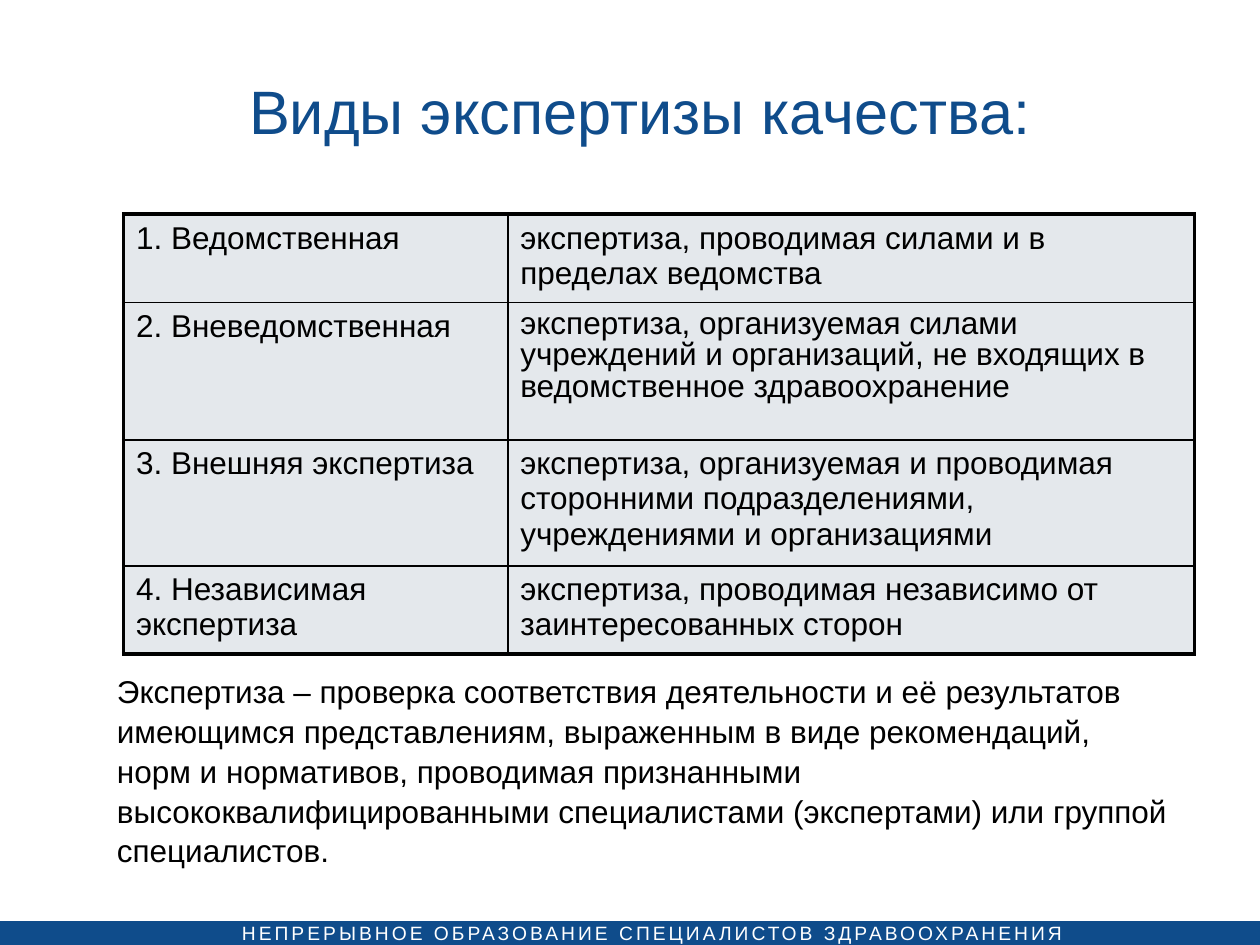
import pptx
import pptx.util
import pptx.dml.color
import pptx.enum.shapes
import pptx.enum.text
import pptx.oxml
import pptx.oxml.ns

Inches = pptx.util.Inches
Pt = pptx.util.Pt
RGBColor = pptx.dml.color.RGBColor
ALIGN = pptx.enum.text.PP_ALIGN
ANCHOR = pptx.enum.text.MSO_ANCHOR

BLUE = RGBColor(0x0F, 0x4C, 0x8B)
WHITE = RGBColor(0xFF, 0xFF, 0xFF)
BLACK = RGBColor(0, 0, 0)
GREY = RGBColor(0xE4, 0xE8, 0xEC)
THICK, THIN = 2.25, 1

KINDS = [
    ("1. Ведомственная",
     "экспертиза, проводимая силами и в пределах ведомства"),
    ("2. Вневедомственная",
     "экспертиза, организуемая силами учреждений и организаций, "
     "не входящих в ведомственное здравоохранение"),
    ("3. Внешняя экспертиза",
     "экспертиза, организуемая и проводимая сторонними подразделениями, "
     "учреждениями и организациями"),
    ("4. Независимая экспертиза",
     "экспертиза, проводимая независимо от заинтересованных сторон"),
]
WIDTHS = [3.05, 5.45]
HEIGHTS = [0.64, 1.09, 0.92, 0.64]
TIGHT = (1, 1)


def write(frame, text, size=18, color=BLACK, align=ALIGN.LEFT,
          line=None, track=None):
    frame.word_wrap = True
    para = frame.paragraphs[0]
    para.alignment = align
    para.line_spacing = line
    run = para.add_run()
    run.text = text
    run.font.name = "Arial"
    run.font.size = Pt(size)
    run.font.color.rgb = color
    if track:
        run.font._element.set("spc", str(int(track * 100)))


def add_title(slide, text):
    title = slide.shapes.title
    title.left, title.top = Inches(0.83), Inches(0.36)
    title.width, title.height = Inches(8.5), Inches(1.02)
    title.text_frame.vertical_anchor = ANCHOR.MIDDLE
    write(title.text_frame, text, size=35, color=BLUE, align=ALIGN.CENTER)


def add_text(slide, text, left, top, width, height, inset=None,
             anchor=ANCHOR.TOP, **style):
    box = slide.shapes.add_textbox(
        Inches(left), Inches(top), Inches(width), Inches(height))
    frame = box.text_frame
    frame.vertical_anchor = anchor
    if inset is not None:
        frame.margin_left = frame.margin_right = Inches(inset)
        frame.margin_top = frame.margin_bottom = Inches(inset)
    write(frame, text, **style)


def add_band(slide):
    band = slide.shapes.add_shape(
        pptx.enum.shapes.MSO_SHAPE.RECTANGLE,
        Inches(-0.04), Inches(7.31), Inches(10.04), Inches(0.22))
    band.shadow.inherit = False
    band.fill.solid()
    band.fill.fore_color.rgb = BLUE
    band.line.fill.background()


def add_edge(cell, side, width):
    space = pptx.oxml.ns.nsdecls("a")
    edge = pptx.oxml.parse_xml(
        f'<a:ln{side} {space} w="{Pt(width)}"><a:solidFill>'
        f'<a:srgbClr val="{BLACK}"/></a:solidFill></a:ln{side}>')
    cell._tc.get_or_add_tcPr().append(edge)


def add_grid(slide):
    rows, cols = len(HEIGHTS), len(WIDTHS)
    grid = slide.shapes.add_table(
        rows, cols, Inches(0.98), Inches(1.7),
        Inches(sum(WIDTHS)), Inches(sum(HEIGHTS))).table
    grid.first_row = grid.horz_banding = False
    for col, width in zip(grid.columns, WIDTHS):
        col.width = Inches(width)
    for r, texts in enumerate(KINDS):
        grid.rows[r].height = Inches(HEIGHTS[r])
        for c, text in enumerate(texts):
            cell = grid.cell(r, c)
            outer = {"L": c == 0, "R": c == cols - 1,
                     "T": r == 0, "B": r == rows - 1}
            for side, thick in outer.items():
                add_edge(cell, side, THICK if thick else THIN)
            cell.fill.solid()
            cell.fill.fore_color.rgb = GREY
            write(cell.text_frame, text, line=0.9 if (r, c) == TIGHT else None)


def main():
    deck = pptx.Presentation()
    deck.slide_width, deck.slide_height = Inches(10), Inches(7.5)
    slide = deck.slides.add_slide(deck.slide_layouts[5])
    add_band(slide)
    add_text(slide, "НЕПРЕРЫВНОЕ ОБРАЗОВАНИЕ СПЕЦИАЛИСТОВ ЗДРАВООХРАНЕНИЯ",
             1.92, 7.31, 6.63, 0.19, inset=0, size=11, color=WHITE, track=1.7)
    add_title(slide, "Виды экспертизы качества:")
    add_grid(slide)
    add_text(slide,
             "Экспертиза – проверка соответствия деятельности и её результатов "
             "имеющимся представлениям, выраженным в виде рекомендаций, норм и "
             "нормативов, проводимая признанными высококвалифицированными "
             "специалистами (экспертами) или группой специалистов.",
             0.83, 5.48, 8.54, 1.26, anchor=ANCHOR.MIDDLE, line=1.05)
    deck.save("out.pptx")


if __name__ == "__main__":
    main()
